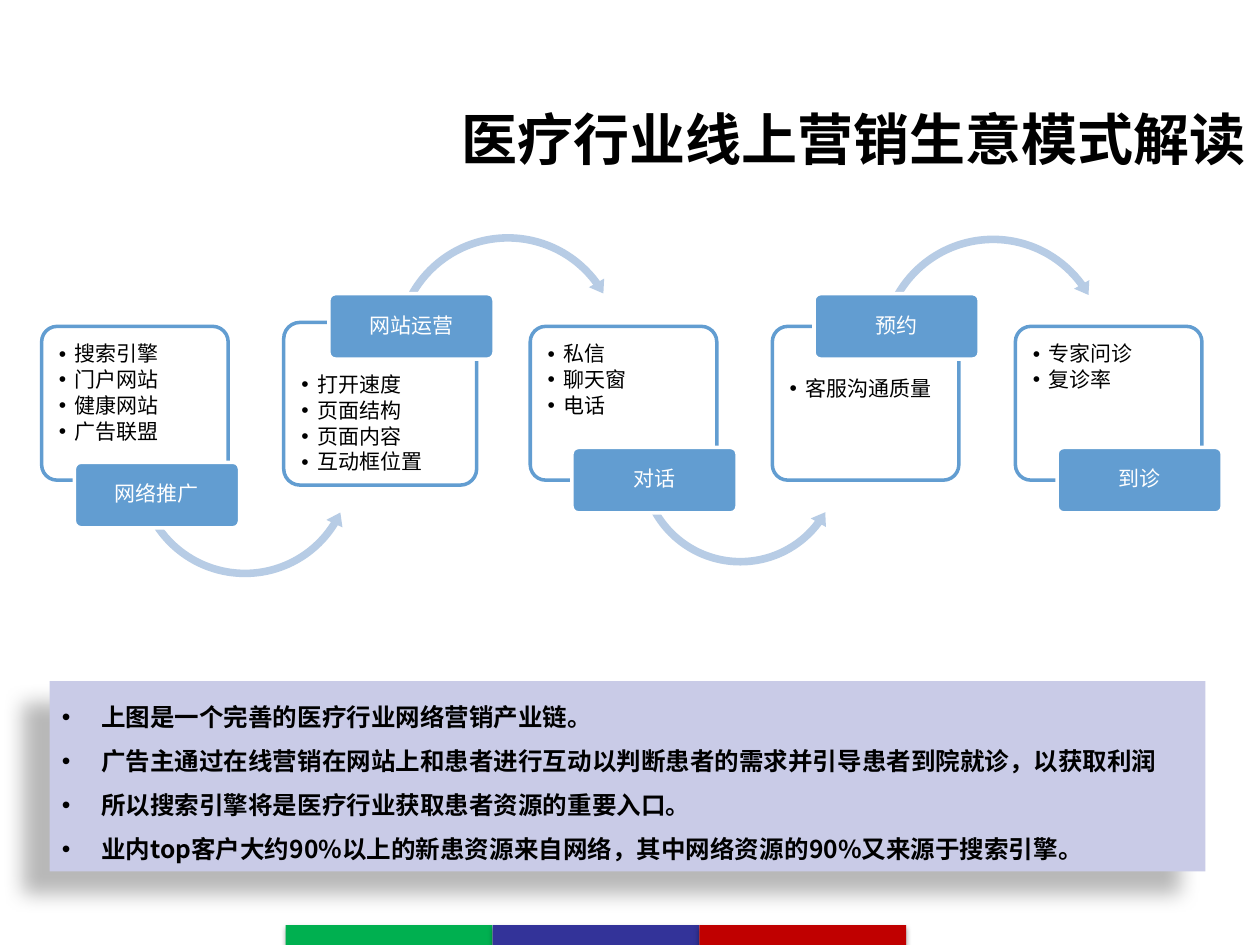
from dataclasses import dataclass

import pptx
import pptx.dml.color
import pptx.enum.shapes
import pptx.enum.text
import pptx.oxml.ns
import pptx.util
from lxml import etree

FONT = "Noto Sans CJK SC"
BLACK = pptx.dml.color.RGBColor(0x00, 0x00, 0x00)
WHITE = pptx.dml.color.RGBColor(0xFF, 0xFF, 0xFF)
STEP_BLUE = pptx.dml.color.RGBColor(0x62, 0x9D, 0xD1)
ARROW_BLUE = pptx.dml.color.RGBColor(0xB7, 0xCC, 0xE5)
SUMMARY_LILAC = pptx.dml.color.RGBColor(0xC9, 0xCB, 0xE7)
FOOTER_COLOURS = (
    pptx.dml.color.RGBColor(0x00, 0xB0, 0x50),
    pptx.dml.color.RGBColor(0x33, 0x33, 0x99),
    pptx.dml.color.RGBColor(0xC0, 0x00, 0x00),
)

SHAPES = pptx.enum.shapes.MSO_SHAPE
ALIGN = pptx.enum.text.PP_ALIGN
ANCHOR = pptx.enum.text.MSO_ANCHOR

LOWER = SHAPES.LEFT_CIRCULAR_ARROW
UPPER = SHAPES.CIRCULAR_ARROW
UPPER_BEND = (0.032, 3.936, 194.31, 125.76, 0.037)


@dataclass
class Step:
    """Places are in cm; an arrow is its kind, left, top, side and bend."""
    label: str
    points: tuple
    panel: tuple
    label_at: tuple
    label_above: bool = False
    arrow: tuple = ()


STEPS = (
    Step("网络推广", ("搜索引擎", "门户网站", "健康网站", "广告联盟"),
         (0.84, 6.58, 3.76, 3.1), (1.5, 9.32),
         arrow=(LOWER, 2.64, 7.14, 4.6, (0.033, 4.111, 19.07, 87.45, 0.039))),
    Step("网站运营", ("打开速度", "页面结构", "页面内容", "互动框位置"),
         (5.72, 6.5, 3.89, 3.28), (6.63, 5.92), True,
         arrow=(UPPER, 7.85, 4.62, 4.78, UPPER_BEND)),
    Step("对话", ("私信", "聊天窗", "电话"),
         (10.69, 6.58, 3.76, 3.1), (11.53, 9.02),
         arrow=(LOWER, 12.78, 7.21, 4.29, (0.036, 4.411, 22.17, 90.25, 0.041))),
    Step("预约", ("客服沟通质量",),
         (15.57, 6.58, 3.76, 3.1), (16.41, 5.92), True,
         arrow=(UPPER, 17.63, 4.65, 4.78, UPPER_BEND)),
    Step("到诊", ("专家问诊", "复诊率"),
         (20.47, 6.58, 3.76, 3.1), (21.31, 9.02)),
)

SUMMARY = (
    "上图是一个完善的医疗行业网络营销产业链。",
    "广告主通过在线营销在网站上和患者进行互动以判断患者的需求并引导患者到院就诊，以获取利润",
    "所以搜索引擎将是医疗行业获取患者资源的重要入口。",
    "业内top客户大约90%以上的新患资源来自网络，其中网络资源的90%又来源于搜索引擎。",
)


def add_filled(slide, kind, box, fill, line=None):
    shape = slide.shapes.add_shape(kind, *map(pptx.util.Cm, box))
    shape.shadow.inherit = False
    shape.fill.solid()
    shape.fill.fore_color.rgb = fill
    if line is None:
        shape.line.fill.background()
    else:
        shape.line.color.rgb = line
        shape.line.width = pptx.util.Pt(2)
    return shape


def set_shadow(shape, alpha, blur, distance, angle, anchor):
    """Blur and distance are in points, alpha in percent."""
    effects = shape._element.spPr.find(pptx.oxml.ns.qn("a:effectLst"))
    shadow = etree.SubElement(
        effects, pptx.oxml.ns.qn("a:outerShdw"),
        blurRad=str(pptx.util.Pt(blur)), dist=str(pptx.util.Pt(distance)),
        dir=str(angle * 60000), algn=anchor, rotWithShape="0")
    colour = etree.SubElement(shadow, pptx.oxml.ns.qn("a:srgbClr"), val="000000")
    etree.SubElement(colour, pptx.oxml.ns.qn("a:alpha"), val=str(alpha * 1000))


def set_frame(shape, anchor, insets=None):
    """Insets are left, top, right and bottom in cm."""
    frame = shape.text_frame
    frame.word_wrap = True
    frame.vertical_anchor = anchor
    if insets:
        (frame.margin_left, frame.margin_top,
         frame.margin_right, frame.margin_bottom) = map(pptx.util.Cm, insets)
    return frame


def write(frame, lines, size, colour, bold=False, align=ALIGN.LEFT,
          spacing=1.0, after=0, indent=None):
    """Write one paragraph per line; an indent in cm gives it a bullet."""
    for number, line in enumerate(lines):
        paragraph = frame.add_paragraph() if number else frame.paragraphs[0]
        paragraph.alignment = align
        paragraph.line_spacing = spacing
        paragraph.space_after = pptx.util.Pt(after)
        if indent:
            properties = paragraph._p.get_or_add_pPr()
            properties.set("marL", str(pptx.util.Cm(indent)))
            properties.set("indent", str(-pptx.util.Cm(indent)))
            etree.SubElement(properties, pptx.oxml.ns.qn("a:buFont"), typeface="Arial")
            etree.SubElement(properties, pptx.oxml.ns.qn("a:buChar"), char="•")
        run = paragraph.add_run()
        run.text = line
        run.font.size = pptx.util.Pt(size)
        run.font.bold = bold
        run.font.name = FONT
        run.font.color.rgb = colour
        etree.SubElement(run._r.get_or_add_rPr(), pptx.oxml.ns.qn("a:ea"), typeface=FONT)


def add_title(slide):
    title = slide.shapes.add_textbox(*map(pptx.util.Cm, (2.51, 1.19, 22.86, 3.18)))
    write(set_frame(title, ANCHOR.MIDDLE), ("医疗行业线上营销生意模式解读",),
          32, BLACK, bold=True, align=ALIGN.RIGHT)


def add_panel(slide, step):
    panel = add_filled(slide, SHAPES.ROUNDED_RECTANGLE, step.panel, WHITE, STEP_BLUE)
    panel.adjustments[0] = 0.1
    colour = panel._element.spPr.find(".//" + pptx.oxml.ns.qn("a:srgbClr"))
    etree.SubElement(colour, pptx.oxml.ns.qn("a:alpha"), val="90000")
    top = 0.95 if step.label_above else 0.26
    frame = set_frame(panel, ANCHOR.TOP, (0.26, top, 0.26, 0.26))
    write(frame, step.points, 12, BLACK, spacing=0.9, after=1.8, indent=0.32)


def add_arrow(slide, kind, left, top, side, bend):
    arrow = add_filled(slide, kind, (left, top, side, side), ARROW_BLUE)
    for number, value in enumerate(bend):
        arrow.adjustments[number] = value


def add_label(slide, step):
    label = add_filled(slide, SHAPES.ROUNDED_RECTANGLE,
                       (*step.label_at, 3.33, 1.32), STEP_BLUE, WHITE)
    label.adjustments[0] = 0.1
    frame = set_frame(label, ANCHOR.MIDDLE, (0.06, 0.04, 0.06, 0.04))
    write(frame, (step.label,), 12, WHITE, align=ALIGN.CENTER, spacing=0.9)


def add_summary(slide):
    summary = add_filled(slide, SHAPES.RECTANGLE, (1, 13.73, 23.3, 3.84), SUMMARY_LILAC)
    set_shadow(summary, 28, 11.8, 19.7, 141, "tr")
    write(set_frame(summary, ANCHOR.TOP), SUMMARY, 14, BLACK,
          bold=True, spacing=1.5, indent=0.79)


def add_footer(slide):
    width = 4.17
    for number, colour in enumerate(FOOTER_COLOURS):
        bar = add_filled(slide, SHAPES.RECTANGLE,
                         (5.76 + number * width, 18.65, width, 0.4), colour)
        set_shadow(bar, 35, 3.1, 1.8, 90, "ctr")


def main():
    deck = pptx.Presentation()
    deck.slide_width = pptx.util.Cm(25.4)
    deck.slide_height = pptx.util.Cm(19.05)
    slide = deck.slides.add_slide(deck.slide_layouts[6])
    for step in STEPS:
        add_panel(slide, step)
        if step.arrow:
            add_arrow(slide, *step.arrow)
        add_label(slide, step)
    add_title(slide)
    add_summary(slide)
    add_footer(slide)
    deck.save("out.pptx")


if __name__ == "__main__":
    main()
